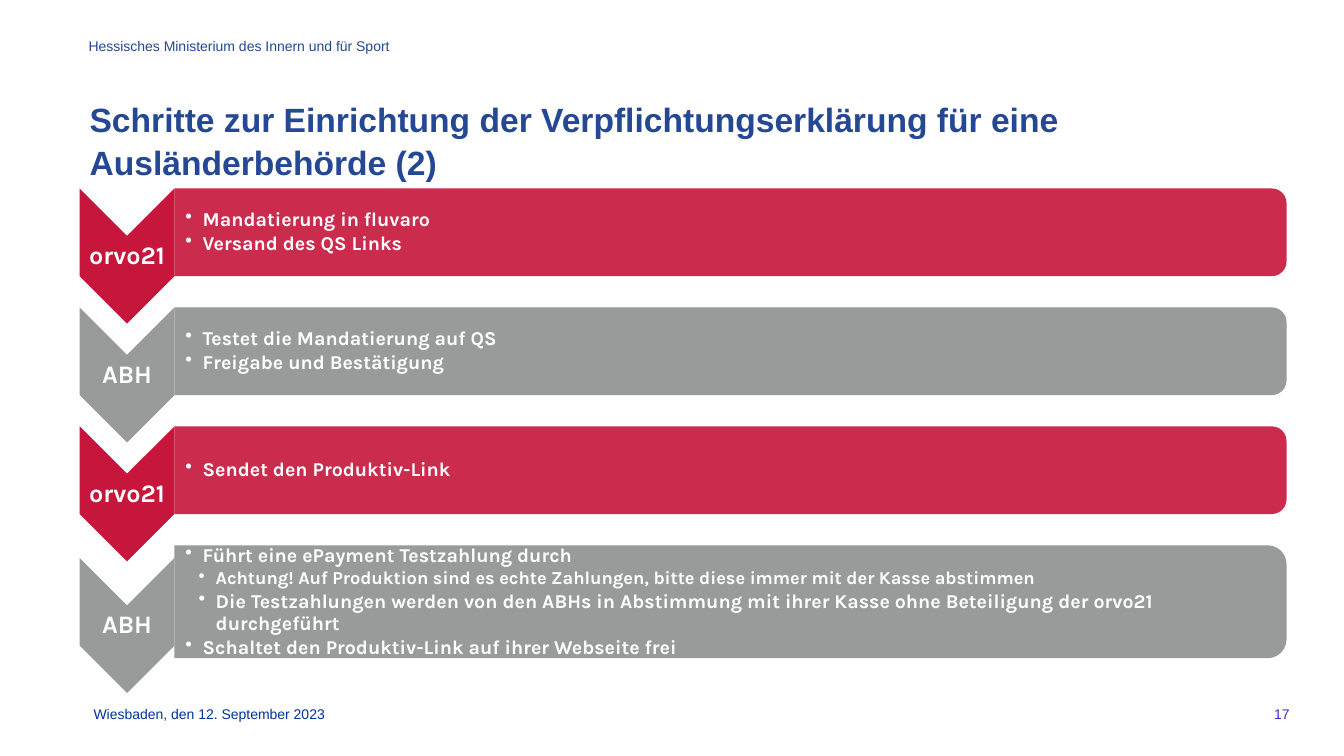
import pptx
import pptx.util
import pptx.dml.color
import pptx.enum.shapes
import pptx.enum.text
import lxml.etree

inch = pptx.util.Inches
point = pptx.util.Pt
align = pptx.enum.text.PP_ALIGN
anchor = pptx.enum.text.MSO_ANCHOR
preset = pptx.enum.shapes.MSO_SHAPE
qname = pptx.oxml.ns.qn

theme = {
    "red": "C6163B", "grey": "989B9A", "white": "FFFFFF",
    "navy": "244894", "blue": "003399", "violet": "3333CC",
    "body": "Arial", "diagram": "Karla",
    "small": 10, "title": 24, "label": 18, "step": 14, "note": 13,
}

deck = pptx.Presentation()
deck.slide_width, deck.slide_height = inch(13.33), inch(7.5)
page = deck.slides.add_slide(deck.slide_layouts[6])


def add_text(text, place, font="body", size="small", color="navy", bold=False,
             wrap=True, alignment=align.LEFT, middle=False, spacing=None,
             insets=(0.1, 0.05, 0.1, 0.05), bullets=False):
    box = page.shapes.add_textbox(*[inch(value) for value in place])
    frame = box.text_frame
    frame.word_wrap = wrap
    frame.vertical_anchor = anchor.MIDDLE if middle else anchor.TOP
    (frame.margin_left, frame.margin_top,
     frame.margin_right, frame.margin_bottom) = [inch(value) for value in insets]
    entries = text if bullets else [(text, 0, size)]
    for index, (line, level, line_size) in enumerate(entries):
        para = frame.paragraphs[0] if index == 0 else frame.add_paragraph()
        para.alignment = alignment
        if spacing:
            para.line_spacing = spacing
        if bullets:
            para.level = level + 1
            para.space_after = point(2.1)
            properties = para._p.get_or_add_pPr()
            properties.set("marL", str(inch(0.17 + 0.13 * level)))
            properties.set("indent", str(-inch(0.17)))
            lxml.etree.SubElement(properties, qname("a:buChar")).set("char", "•")
        span = para.add_run()
        span.text = line
        span.font.name = theme[font]
        span.font.size = point(theme[line_size])
        span.font.bold = bold
        span.font.color.rgb = pptx.dml.color.RGBColor.from_string(theme[color])


def add_turned(kind, place, color, opacity=100):
    left, top, width, height = place
    shape = page.shapes.add_shape(
        kind, inch(left + (width - height) / 2), inch(top + (height - width) / 2),
        inch(height), inch(width))
    shape.rotation = 90
    shape.shadow.inherit = False
    shape.line.fill.background()
    shape.fill.solid()
    shape.fill.fore_color.rgb = pptx.dml.color.RGBColor.from_string(theme[color])
    if opacity < 100:
        tint = shape._element.spPr.find(".//" + qname("a:srgbClr"))
        lxml.etree.SubElement(tint, qname("a:alpha")).set("val", str(opacity * 1000))


add_text("17", (9.56, 6.95, 3.33, 0.33), color="violet", alignment=align.RIGHT)
add_text("Hessisches Ministerium des Innern und für Sport",
         (0.78, 0.32, 3.21, 0.27), wrap=False)
add_text("Wiesbaden, den 12. September 2023", (0.83, 6.95, 3.23, 0.31), color="blue")
add_text("Schritte zur Einrichtung der Verpflichtungserklärung für eine "
         "Ausländerbehörde (2)", (0.79, 0.91, 10.51, 1.1),
         size="title", bold=True, spacing=1.06)

steps = [
    ("orvo21", "red", 90, 0.87, [
        ("Mandatierung in fluvaro", 0, "step"),
        ("Versand des QS Links", 0, "step")]),
    ("ABH", "grey", 100, 0.87, [
        ("Testet die Mandatierung auf QS", 0, "step"),
        ("Freigabe und Bestätigung", 0, "step")]),
    ("orvo21", "red", 90, 0.87, [
        ("Sendet den Produktiv-Link", 0, "step")]),
    ("ABH", "grey", 100, 1.12, [
        ("Führt eine ePayment Testzahlung durch", 0, "step"),
        ("Achtung! Auf Produktion sind es echte Zahlungen, bitte diese immer "
         "mit der Kasse abstimmen", 1, "note"),
        ("Die Testzahlungen werden von den ABHs in Abstimmung mit ihrer Kasse "
         "ohne Beteiligung der orvo21 durchgeführt", 1, "step"),
        ("Schaltet den Produktiv-Link auf ihrer Webseite frei", 0, "step")]),
]
first_top, pitch = 1.87, 1.18
chevron_left, chevron_width, chevron_height = 0.79, 0.94, 1.34
bar_left, bar_width, bar_height = 1.73, 11.03, 0.87
label_height = 0.4

for row, (actor, color, opacity, height, tasks) in enumerate(steps):
    top = first_top + row * pitch
    chevron_top = top + (height - bar_height) / 2
    label_top = chevron_top + (chevron_height - label_height) / 2
    add_turned(preset.CHEVRON,
               (chevron_left, chevron_top, chevron_width, chevron_height), color)
    add_text(actor, (chevron_left, label_top, chevron_width, label_height),
             font="diagram", size="label", color="white", bold=True, middle=True,
             alignment=align.CENTER, spacing=0.9, insets=(0.01,) * 4)
    add_turned(preset.ROUND_2_SAME_RECTANGLE,
               (bar_left, top, bar_width, height), color, opacity)
    add_text(tasks, (bar_left, top + 0.04, bar_width - 0.04, height - 0.08),
             font="diagram", color="white", bold=True, middle=True, spacing=0.9,
             insets=(0.11, 0.01, 0.01, 0.01), bullets=True)

deck.save("out.pptx")
